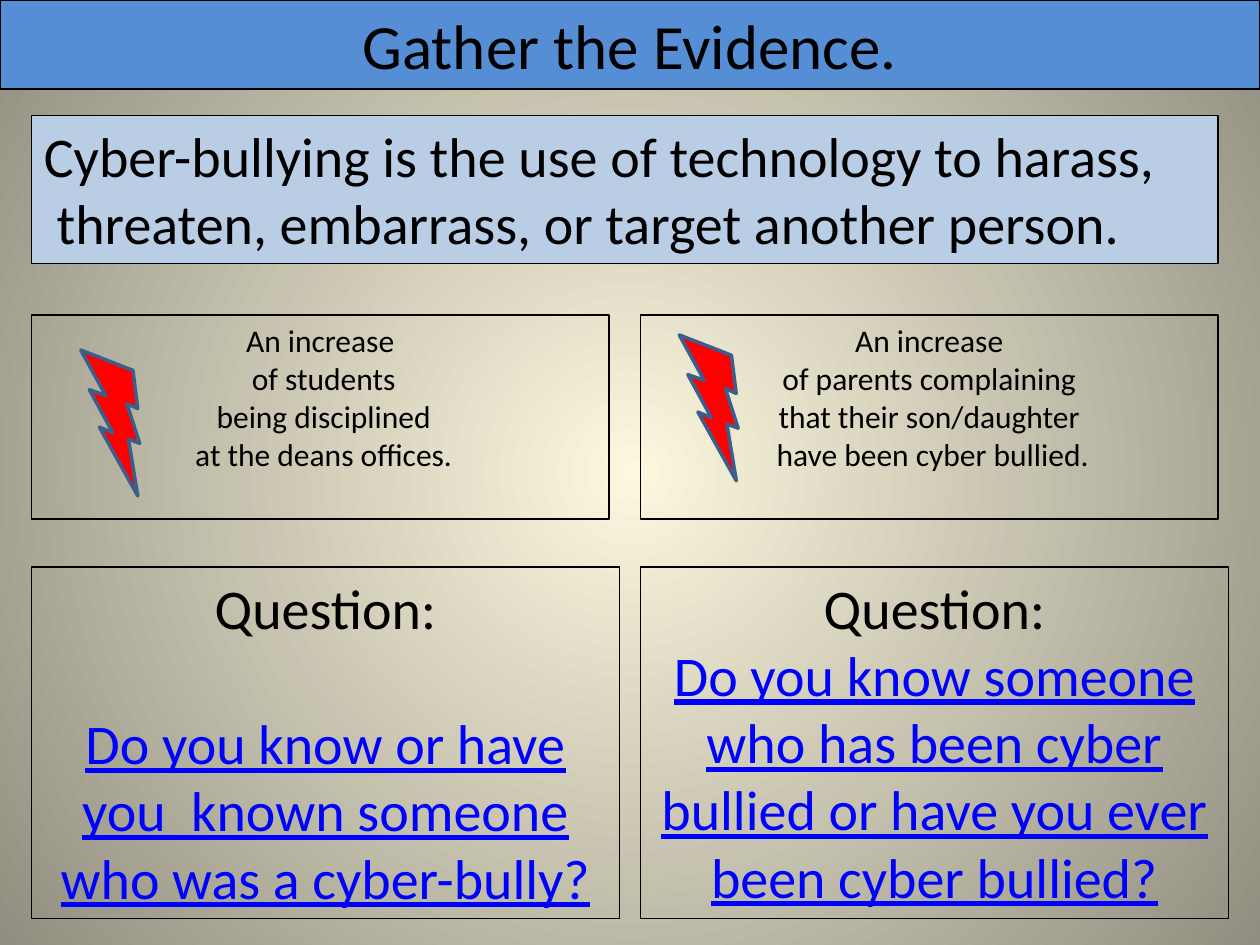
from lxml.etree import SubElement
from pptx import Presentation
from pptx.dml.color import RGBColor
from pptx.enum.shapes import MSO_SHAPE
from pptx.enum.text import MSO_ANCHOR, PP_ALIGN
from pptx.oxml.ns import qn
from pptx.util import Pt

BLACK = RGBColor(0x00, 0x00, 0x00)
BLUE = RGBColor(0x00, 0x00, 0xFF)
RED = RGBColor(0xFF, 0x00, 0x00)
BOLT_EDGE = RGBColor(0x3A, 0x5F, 0x8C)
TITLE_FILL = RGBColor(0x55, 0x8E, 0xD5)
DEFINITION_FILL = RGBColor(0xB9, 0xCD, 0xE5)
GLOW_CENTER = RGBColor(0xFC, 0xF7, 0xDD)
GLOW_EDGE = RGBColor(0x91, 0x8E, 0x81)

WIDTH, HEIGHT = 720, 540
COLUMNS = (18, 366)
EVIDENCE_TOP, EVIDENCE_SIZE = 180, (330, 116.64)
QUESTION_TOP, QUESTION_SIZE = 324, (336, 201)
BOLT_SIZE = (77.76, 54)

TITLE = "Gather the Evidence."
DEFINITION = [
    "Cyber-bullying is the use of technology to harass,",
    " threaten, embarrass, or target another person.",
]
EVIDENCE = [
    ["An increase", " of students", " being disciplined", " at the deans offices."],
    ["An increase", " of parents complaining ", "that their son/daughter",
     " have been cyber bullied."],
]
QUESTIONS = [
    ("Do you know or have you  known someone who was a cyber-bully?", 39),
    ("Do you know someone who has been cyber bullied or have you ever been cyber bullied?", 0),
]
BOLTS = [(26.64, 210.96), (368.64, 202.32)]


def paint_background(slide):
    fill = slide.background.fill
    fill.gradient()
    for stop, color in zip(fill.gradient_stops, (GLOW_CENTER, GLOW_EDGE)):
        stop.color.rgb = color
    gradient = slide.element.find(".//" + qn("a:gradFill"))
    gradient.remove(gradient.find(qn("a:lin")))
    circle = SubElement(gradient, qn("a:path"), path="circle")
    SubElement(circle, qn("a:fillToRect"), l="50000", t="50000", r="50000", b="50000")


def add_box(slide, left, top, size, fill_color=None):
    box = slide.shapes.add_textbox(Pt(left), Pt(top), Pt(size[0]), Pt(size[1]))
    if fill_color is not None:
        box.fill.solid()
        box.fill.fore_color.rgb = fill_color
    box.line.color.rgb = BLACK
    box.line.width = Pt(0.75)
    box.text_frame.word_wrap = True
    box.text_frame.vertical_anchor = MSO_ANCHOR.TOP
    return box.text_frame


def add_run(paragraph, text, size, color=BLACK):
    run = paragraph.add_run()
    run.text = text
    run.font.name = "Calibri"
    run.font.size = Pt(size)
    run.font.color.rgb = color
    return run


def add_bolt(slide, left, top):
    bolt = slide.shapes.add_shape(
        MSO_SHAPE.LIGHTNING_BOLT, Pt(left), Pt(top), Pt(BOLT_SIZE[0]), Pt(BOLT_SIZE[1]))
    bolt.rotation = 39
    bolt.shadow.inherit = False
    bolt.fill.solid()
    bolt.fill.fore_color.rgb = RED
    bolt.line.color.rgb = BOLT_EDGE
    bolt.line.width = Pt(2)


def main():
    presentation = Presentation()
    presentation.slide_width, presentation.slide_height = Pt(WIDTH), Pt(HEIGHT)
    slide = presentation.slides.add_slide(presentation.slide_layouts[6])
    paint_background(slide)

    title = add_box(slide, 0, 0, (WIDTH, 50.9), TITLE_FILL).paragraphs[0]
    title.alignment = PP_ALIGN.CENTER
    add_run(title, TITLE, 36)

    frame = add_box(slide, COLUMNS[0], 66, (678, 84.8), DEFINITION_FILL)
    for index, line in enumerate(DEFINITION):
        paragraph = frame.add_paragraph() if index else frame.paragraphs[0]
        add_run(paragraph, line, 32)

    for left, lines in zip(COLUMNS, EVIDENCE):
        paragraph = add_box(slide, left, EVIDENCE_TOP, EVIDENCE_SIZE).paragraphs[0]
        paragraph.alignment = PP_ALIGN.CENTER
        for index, line in enumerate(lines):
            if index:
                paragraph.add_line_break()
            add_run(paragraph, line, 18)

    for left, (question, gap) in zip(COLUMNS, QUESTIONS):
        frame = add_box(slide, left, QUESTION_TOP, QUESTION_SIZE)
        heading, body = frame.paragraphs[0], frame.add_paragraph()
        heading.alignment = body.alignment = PP_ALIGN.CENTER
        add_run(heading, "Question:", 32)
        body.space_before = Pt(gap)
        add_run(body, question, 32, BLUE).font.underline = True

    for left, top in BOLTS:
        add_bolt(slide, left, top)

    presentation.save("out.pptx")


if __name__ == "__main__":
    main()
